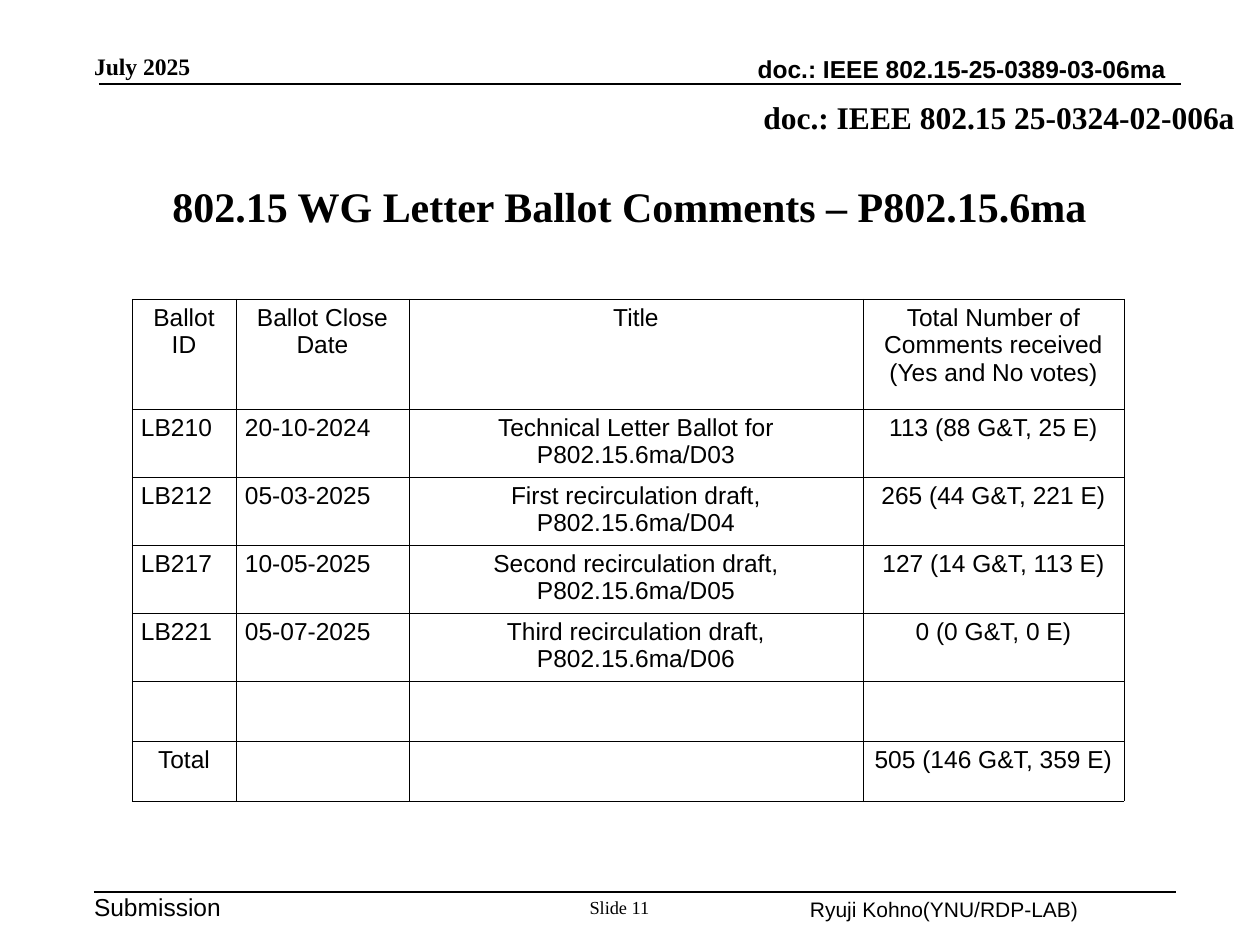
from dataclasses import dataclass

from pptx import Presentation
from pptx import util as u
from pptx.dml.color import RGBColor
from pptx.enum import shapes, text
from pptx.oxml import parse_xml
from pptx.oxml.ns import nsdecls, qn

PX_PER_INCH = 126
LEFT, CENTER, RIGHT = text.PP_ALIGN.LEFT, text.PP_ALIGN.CENTER, text.PP_ALIGN.RIGHT
TOP, MIDDLE, BOTTOM = (text.MSO_ANCHOR.TOP, text.MSO_ANCHOR.MIDDLE,
                       text.MSO_ANCHOR.BOTTOM)


@dataclass(frozen=True)
class Theme:
    ink: str = "000000"
    sans: str = "Arial"
    serif: str = "Times New Roman"
    title: float = 24
    document: float = 18
    body: float = 14
    date: float = 13.5
    author: float = 12
    number: float = 10.5
    rule: float = 1
    border: float = 0.06


def px(length):
    return u.Emu(round(length * u.Inches(1) / PX_PER_INCH))


def write(frame, words, *, size, font, color, bold=False, align=LEFT):
    paragraph = frame.paragraphs[0]
    paragraph.alignment = align
    run = paragraph.add_run()
    run.text = words
    run.font.size = u.Pt(size)
    run.font.name = font
    run.font.bold = bold
    run.font.color.rgb = RGBColor.from_string(color)


class SlideBuilder:
    def __init__(self, slide, theme):
        self.slide = slide
        self.theme = theme

    def fill_frame(self, frame, words, anchor=TOP, inset=(0, 0), **style):
        frame.word_wrap = True
        frame.auto_size = text.MSO_AUTO_SIZE.NONE
        frame.vertical_anchor = anchor
        frame.margin_left = frame.margin_right = px(inset[0])
        frame.margin_top = frame.margin_bottom = px(inset[1])
        write(frame, words, color=self.theme.ink, **style)

    def title(self, words, box):
        heading = self.slide.shapes.title
        heading.left, heading.top, heading.width, heading.height = map(px, box)
        self.fill_frame(heading.text_frame, words, MIDDLE, (10, 5), bold=True,
                        size=self.theme.title, font=self.theme.serif, align=CENTER)

    def label(self, words, box, **style):
        area = self.slide.shapes.add_textbox(*map(px, box))
        self.fill_frame(area.text_frame, words, **style)

    def rule(self, left, right, y):
        line = self.slide.shapes.add_connector(
            shapes.MSO_CONNECTOR.STRAIGHT, px(left), px(y), px(right), px(y))
        line.line.color.rgb = RGBColor.from_string(self.theme.ink)
        line.line.width = u.Pt(self.theme.rule)
        line._element.spPr.append(parse_xml(f"<a:effectLst {nsdecls('a')}/>"))

    def border(self, cell):
        properties = cell._tc.get_or_add_tcPr()
        for position, side in enumerate(("lnL", "lnR", "lnT", "lnB")):
            properties.insert(position, parse_xml(
                f'<a:{side} {nsdecls("a")} w="{u.Pt(self.theme.border)}"><a:solidFill>'
                f'<a:srgbClr val="{self.theme.ink}"/></a:solidFill></a:{side}>'))

    def table(self, rows, left, top, widths, heights, align):
        grid = self.slide.shapes.add_table(
            len(rows), len(widths), px(left), px(top),
            px(sum(widths)), px(sum(heights))).table
        grid.first_row = grid.horz_banding = False
        for column, width in zip(grid.columns, widths):
            column.width = px(width)
        for r, (row, height) in enumerate(zip(rows, heights)):
            grid.rows[r].height = px(height)
            for c, words in enumerate(row):
                cell = grid.cell(r, c)
                cell.margin_left = cell.margin_right = px(9)
                cell.margin_top = cell.margin_bottom = px(5)
                cell.fill.background()
                self.border(cell)
                if words:
                    write(cell.text_frame, words, size=self.theme.body,
                          font=self.theme.sans, color=self.theme.ink,
                          align=align(r, c))


BALLOTS = [
    ("Ballot ID", "Ballot Close Date", "Title",
     "Total Number of Comments received (Yes and No votes)"),
    ("LB210", "20-10-2024", "Technical Letter Ballot for P802.15.6ma/D03",
     "113 (88 G&T, 25 E)"),
    ("LB212", "05-03-2025", "First recirculation draft, P802.15.6ma/D04",
     "265 (44 G&T, 221 E)"),
    ("LB217", "10-05-2025", "Second recirculation draft, P802.15.6ma/D05",
     "127 (14 G&T, 113 E)"),
    ("LB221", "05-07-2025", "Third recirculation draft, P802.15.6ma/D06",
     "0 (0 G&T, 0 E)"),
    ("", "", "", ""),
    ("Total", "", "", "505 (146 G&T, 359 E)"),
]


def ballot_align(row, column):
    """Ballot IDs and dates sit left; headings, totals and the rest are centred."""
    return LEFT if 0 < row < len(BALLOTS) - 1 and column < 2 else CENTER


def main():
    theme = Theme()
    deck = Presentation()
    deck.slide_width, deck.slide_height = px(1260), px(945)
    title_only = deck.slide_layouts[5]
    page = SlideBuilder(deck.slides.add_slide(title_only), theme)

    # Header
    page.label("July 2025", (94, 52, 258, 28), anchor=BOTTOM, bold=True,
               size=theme.date, font=theme.serif)
    page.label("doc.: IEEE 802.15-25-0389-03-06ma", (620, 53, 546, 30),
               anchor=BOTTOM, bold=True, align=RIGHT,
               size=theme.body, font=theme.sans)
    page.rule(99, 1181, 84)
    page.label("doc.: IEEE 802.15 25-0324-02-006a", (592, 98, 643, 38),
               anchor=BOTTOM, bold=True, align=RIGHT,
               size=theme.document, font=theme.serif)

    # Title and ballot table
    page.title("802.15 WG Letter Ballot Comments – P802.15.6ma",
               (94, 151, 1071, 110))
    page.table(BALLOTS, 132, 299, widths=(104, 173, 454, 261),
               heights=(110, *[68] * 4, *[60] * 2), align=ballot_align)

    # Footer
    page.rule(94, 1176, 892)
    page.label("Submission", (94, 892, 146, 30), size=theme.body, font=theme.sans)
    page.label("Slide 11", (583, 896, 73, 38), align=CENTER,
               size=theme.number, font=theme.serif)
    page.label("Ryuji Kohno(YNU/RDP-LAB)", (798, 891, 351, 38), inset=(12, 6),
               size=theme.author, font=theme.sans)

    deck.save("out.pptx")


if __name__ == "__main__":
    main()
